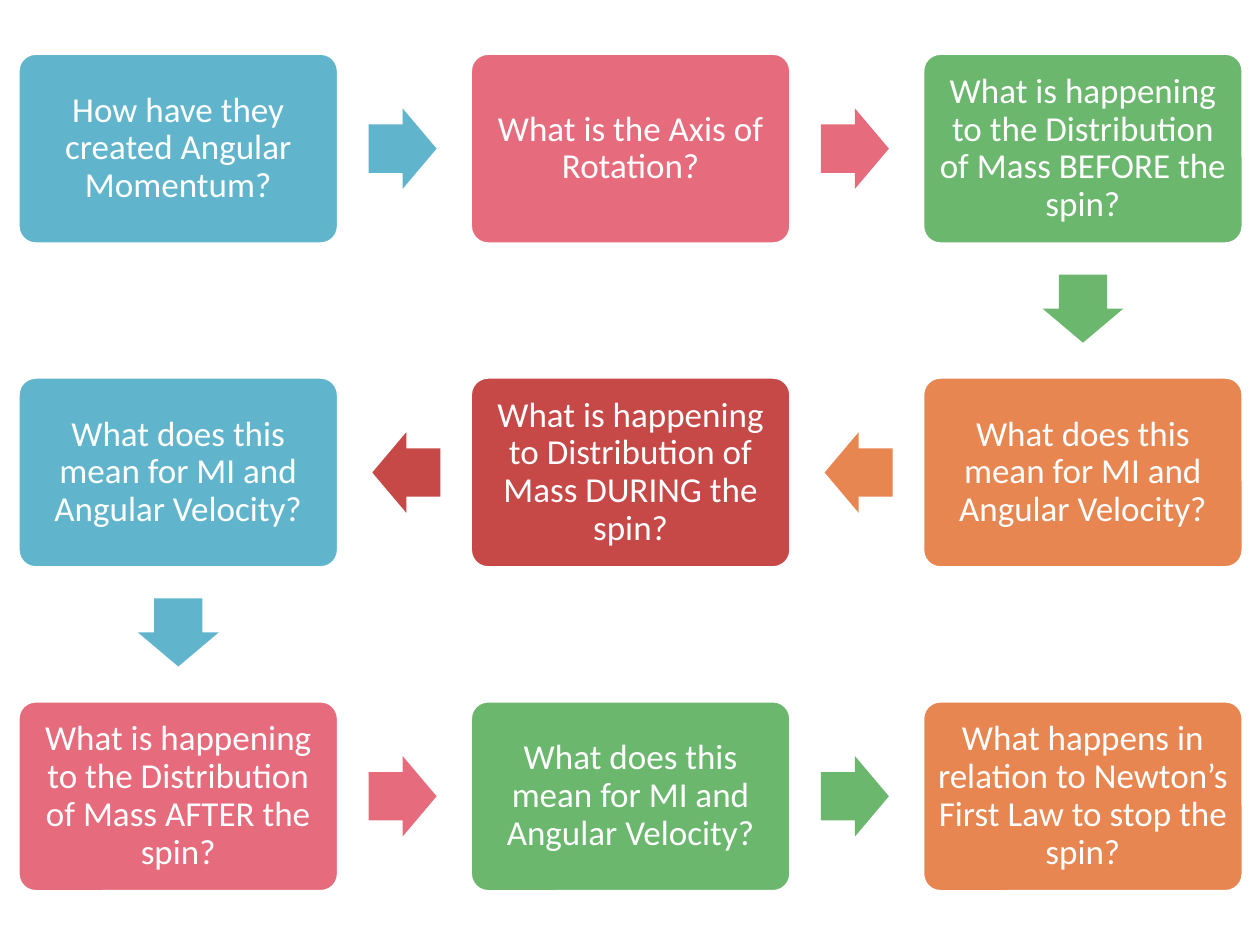
from pptx import Presentation
from pptx.dml.color import RGBColor
from pptx.enum.shapes import MSO_SHAPE
from pptx.enum.text import MSO_ANCHOR, PP_ALIGN
from pptx.util import Inches, Pt

ROUNDED_BOX = MSO_SHAPE.ROUNDED_RECTANGLE
ARROW = MSO_SHAPE.RIGHT_ARROW
MIDDLE = MSO_ANCHOR.MIDDLE
CENTER = PP_ALIGN.CENTER

BLUE, PINK, GREEN = "60B5CC", "E66C7D", "6BB76D"
ORANGE, RED, WHITE = "E88651", "C64847", "FFFFFF"

VELOCITY_QUESTION = "What does this mean for MI and Angular Velocity?"
STEPS = [
    ("How have they created Angular Momentum?", BLUE),
    ("What is the Axis of Rotation?", PINK),
    ("What is happening to the Distribution of Mass BEFORE the spin?", GREEN),
    (VELOCITY_QUESTION, ORANGE),
    ("What is happening to Distribution of Mass DURING the spin?", RED),
    (VELOCITY_QUESTION, BLUE),
    ("What is happening to the Distribution of Mass AFTER the spin?", PINK),
    (VELOCITY_QUESTION, GREEN),
    ("What happens in relation to Newton’s First Law to stop the spin?", ORANGE),
]

COLUMNS = 3
LEFT, TOP = 0.13, 0.41
COLUMN_PITCH, ROW_PITCH = 3.59, 2.57
BOX_WIDTH, BOX_HEIGHT = 2.57, 1.54
ARROW_WIDTH, ARROW_HEIGHT = 0.54, 0.64
ARROW_REACH_ACROSS, ARROW_REACH_DOWN = 1.78, 1.27


def rgb(color):
    return RGBColor.from_string(color)


def grid_cell(index):
    row, column = divmod(index, COLUMNS)
    return row, column if row % 2 == 0 else COLUMNS - 1 - column


def add_filled_shape(slide, kind, center, size, color, adjustments):
    (x, y), (width, height) = center, size
    shape = slide.shapes.add_shape(
        kind, Inches(x - width / 2), Inches(y - height / 2), Inches(width), Inches(height)
    )
    for position, value in enumerate(adjustments):
        shape.adjustments[position] = value
    shape.shadow.inherit = False
    shape.fill.solid()
    shape.fill.fore_color.rgb = rgb(color)
    shape.line.fill.background()
    return shape


def add_step(slide, center, text, color):
    shape = add_filled_shape(slide, ROUNDED_BOX, center, (BOX_WIDTH, BOX_HEIGHT), color, [0.1])
    shape.line.color.rgb = rgb(WHITE)
    shape.line.width = Pt(3.78)
    frame = shape.text_frame
    frame.word_wrap = True
    frame.vertical_anchor = MIDDLE
    frame.margin_left = frame.margin_right = Inches(0.08)
    frame.margin_top = frame.margin_bottom = Inches(0.08)
    paragraph = frame.paragraphs[0]
    paragraph.alignment = CENTER
    paragraph.line_spacing = 0.9
    run = paragraph.add_run()
    run.text = text
    run.font.name = "Calibri"
    run.font.size = Pt(20)
    run.font.color.rgb = rgb(WHITE)


def add_arrow(slide, center, across, down, color):
    arrow_center = (center[0] + across * ARROW_REACH_ACROSS, center[1] + down * ARROW_REACH_DOWN)
    arrow = add_filled_shape(
        slide, ARROW, arrow_center, (ARROW_WIDTH, ARROW_HEIGHT), color, [0.6, 0.5]
    )
    arrow.rotation = 90 if down else 90 * (1 - across)


def main():
    presentation = Presentation()
    presentation.slide_width, presentation.slide_height = Inches(10), Inches(7.5)
    slide = presentation.slides.add_slide(presentation.slide_layouts[6])
    for index, (text, color) in enumerate(STEPS):
        row, column = grid_cell(index)
        center = (
            LEFT + column * COLUMN_PITCH + BOX_WIDTH / 2,
            TOP + row * ROW_PITCH + BOX_HEIGHT / 2,
        )
        add_step(slide, center, text, color)
        if index + 1 < len(STEPS):
            next_row, next_column = grid_cell(index + 1)
            add_arrow(slide, center, next_column - column, next_row - row, color)
    presentation.save("out.pptx")


if __name__ == "__main__":
    main()
